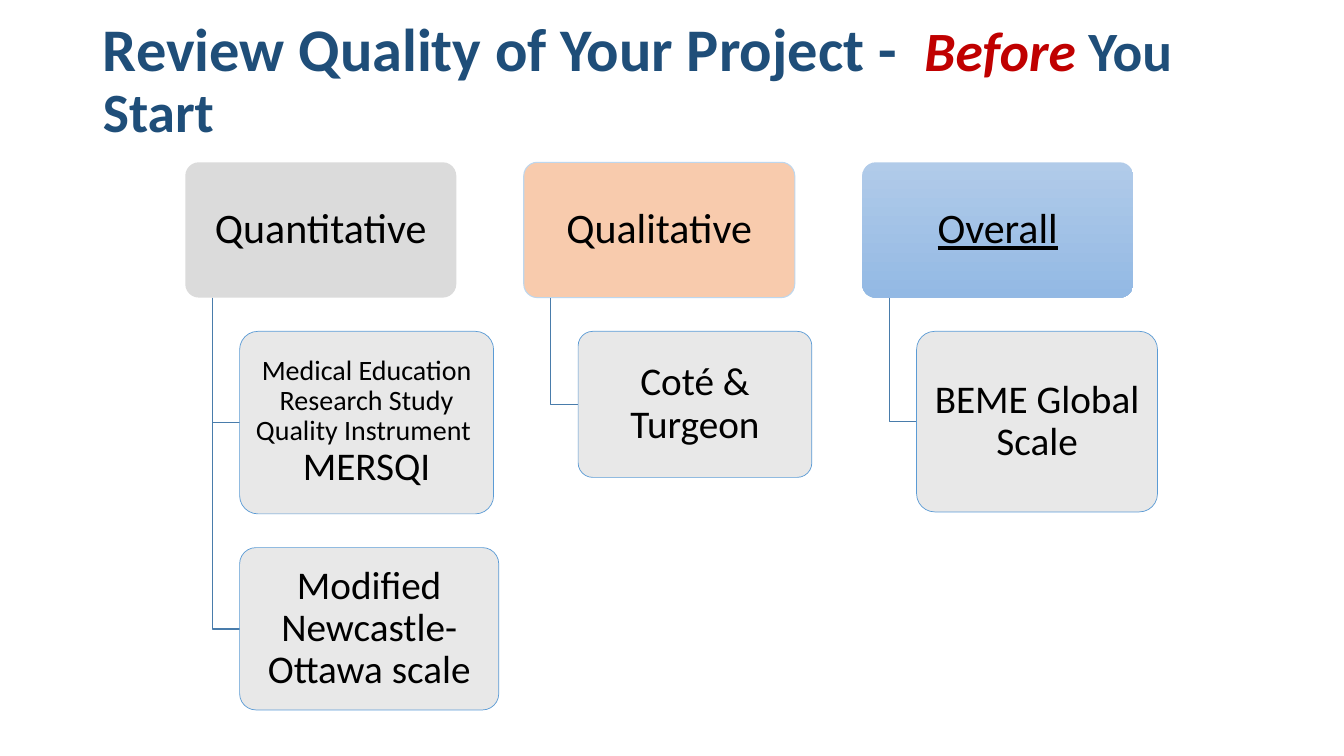
from dataclasses import dataclass

from lxml import etree
from pptx import Presentation
from pptx.dml.color import RGBColor
from pptx.enum import shapes, text
from pptx.oxml import ns
from pptx.util import Cm, Pt

NAVY = RGBColor(0x1F, 0x4E, 0x79)
RED = RGBColor(0xC0, 0x00, 0x00)
BLACK = RGBColor(0x00, 0x00, 0x00)
GREY = RGBColor(0xDB, 0xDB, 0xDB)
PEACH = RGBColor(0xF8, 0xCB, 0xAD)
PALE_BLUE = RGBColor(0xBD, 0xD7, 0xEE)
SKY_TOP = RGBColor(0xB1, 0xCB, 0xE9)
SKY_BOTTOM = RGBColor(0x93, 0xB9, 0xE4)
CARD = RGBColor(0xE6, 0xE6, 0xE6)
CARD_EDGE = RGBColor(0x5B, 0x9B, 0xD5)
BRANCH = RGBColor(0x49, 0x7C, 0xAB)

# Layout in centimetres
LEFT, TOP, PITCH = 4.67, 4.09, 8.53
HEAD_W, HEAD_H = 6.83, 3.41
GAP = 0.85
TRUNK, INDENT = 0.68, 1.37


@dataclass
class Run:
    text: str
    size: float
    color: RGBColor = BLACK
    bold: bool = False
    italic: bool = False
    underline: bool = False


@dataclass
class Card:
    width: float
    height: float
    runs: list[Run]


@dataclass
class Column:
    heading: Run
    fills: list[RGBColor]
    edge: RGBColor | None
    cards: list[Card]


TITLE = [
    Run("Review Quality of Your Project -  ", 43.2, NAVY, bold=True),
    Run("Before ", 39.6, RED, bold=True, italic=True),
    Run("You Start", 39.6, NAVY, bold=True),
]
COLUMNS = [
    Column(Run("Quantitative", 30), [GREY], None, [
        Card(6.4, 4.6, [
            Run("Medical Education Research Study Quality Instrument  ", 20),
            Run("MERSQI", 28),
        ]),
        Card(6.53, 4.09, [Run("Modified Newcastle-Ottawa scale", 28)]),
    ]),
    Column(Run("Qualitative", 30), [PEACH], PALE_BLUE, [
        Card(5.89, 3.68, [Run("Coté & Turgeon", 28)]),
    ]),
    Column(Run("Overall", 30, underline=True), [SKY_TOP, SKY_BOTTOM], None, [
        Card(6.07, 4.55, [Run("BEME Global Scale", 28)]),
    ]),
]


def write(tf, runs: list[Run], align, **margins: float) -> None:
    frame = dict(word_wrap=True, auto_size=text.MSO_AUTO_SIZE.NONE,
                 vertical_anchor=text.MSO_ANCHOR.MIDDLE)
    frame.update({f"margin_{side}": Cm(v) for side, v in margins.items()})
    for name, value in frame.items():
        setattr(tf, name, value)
    p = tf.paragraphs[0]
    p.alignment, p.line_spacing = align, 0.9
    for run in runs:
        r = p.add_run()
        r.text = run.text
        r.font.color.rgb = run.color
        look = dict(name="Calibri", size=Pt(run.size), bold=run.bold,
                    italic=run.italic, underline=run.underline)
        for name, value in look.items():
            setattr(r.font, name, value)


def draw_box(s, x: float, y: float, w: float, h: float, runs: list[Run],
             fills: list[RGBColor], edge: RGBColor | None, weight: float):
    sp = s.shapes.add_shape(shapes.MSO_SHAPE.ROUNDED_RECTANGLE,
                            Cm(x), Cm(y), Cm(w), Cm(h))
    sp.adjustments[0] = 0.1
    sp.shadow.inherit = False
    if len(fills) > 1:
        sp.fill.gradient()
        sp.fill.gradient_angle = 270
        for stop, color in zip(sp.fill.gradient_stops, fills):
            stop.color.rgb = color
    else:
        sp.fill.solid()
        sp.fill.fore_color.rgb = fills[0]
    if edge is None:
        sp.line.fill.background()
    else:
        sp.line.color.rgb = edge
        sp.line.width = Pt(weight)
    write(sp.text_frame, runs, text.PP_ALIGN.CENTER,
          left=0.25, right=0.25, top=0.2, bottom=0.2)
    return sp


def draw_branch(s, x: float, top: float, bottom: float, end: float) -> None:
    builder = s.shapes.build_freeform(Cm(x), Cm(top))
    builder.add_line_segments([(Cm(x), Cm(bottom)), (Cm(end), Cm(bottom))],
                              close=False)
    sp = builder.convert_to_shape()
    sp.shadow.inherit = False
    sp.fill.background()
    sp.line.color.rgb = BRANCH
    sp.line.width = Pt(1)


def draw_column(s, x: float, column: Column) -> None:
    draw_box(s, x, TOP, HEAD_W, HEAD_H, [column.heading],
             column.fills, column.edge, 0.75)
    base = TOP + HEAD_H
    y = base + GAP
    for card in column.cards:
        draw_branch(s, x + TRUNK, base, y + card.height / 2, x + INDENT)
        sp = draw_box(s, x + INDENT, y, card.width, card.height, card.runs,
                      [CARD], CARD_EDGE, 0.5)
        # Slight transparency
        color = sp.fill._xPr.find(ns.qn("a:solidFill"))[0]
        etree.SubElement(color, ns.qn("a:alpha"), val="90000")
        y += card.height + GAP


def main() -> None:
    prs = Presentation()
    prs.slide_width, prs.slide_height = Cm(33.87), Cm(19.05)
    s = prs.slides.add_slide(prs.slide_layouts[5])

    # Title
    title = s.shapes.title
    place = dict(left=2.34, top=1.02, width=30.56, height=3.68)
    for name, value in place.items():
        setattr(title, name, Cm(value))
    write(title.text_frame, TITLE, text.PP_ALIGN.LEFT, bottom=1.7)

    # Columns of the hierarchy
    for i, column in enumerate(COLUMNS):
        draw_column(s, LEFT + i * PITCH, column)

    prs.save("out.pptx")


if __name__ == "__main__":
    main()
